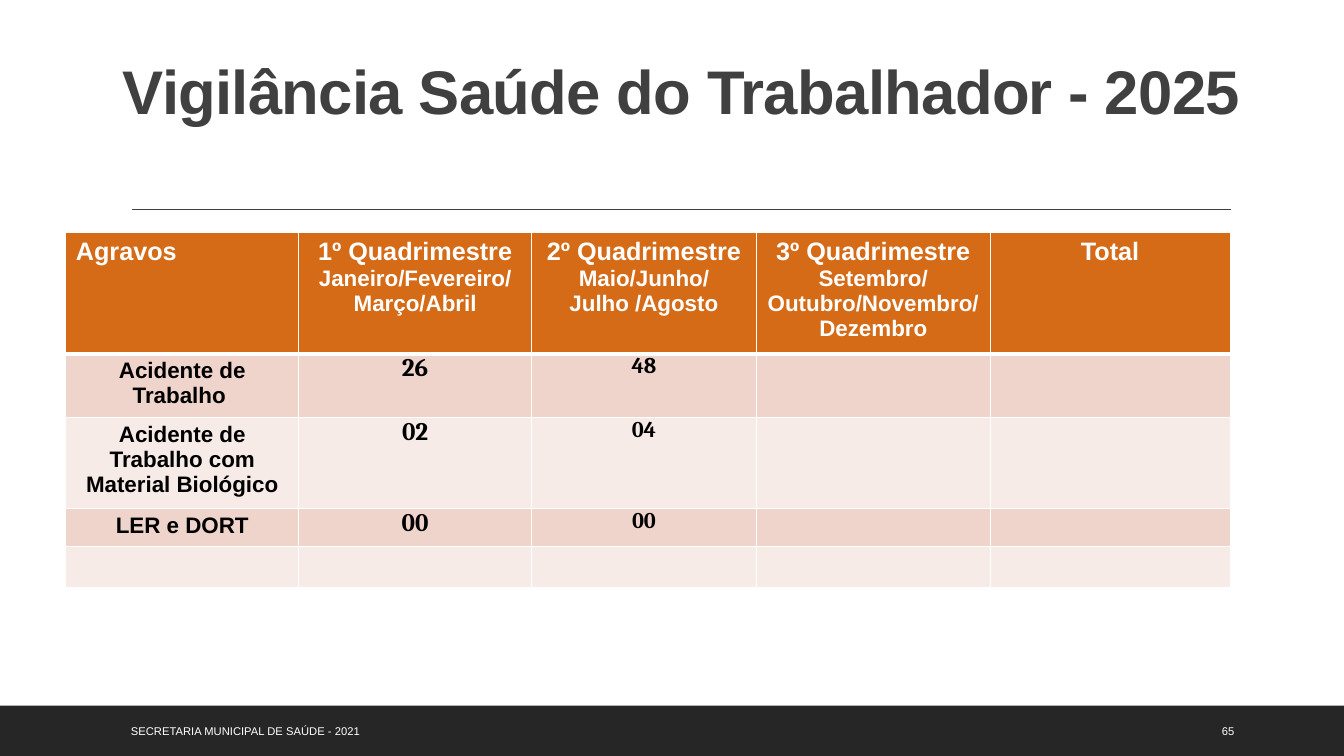
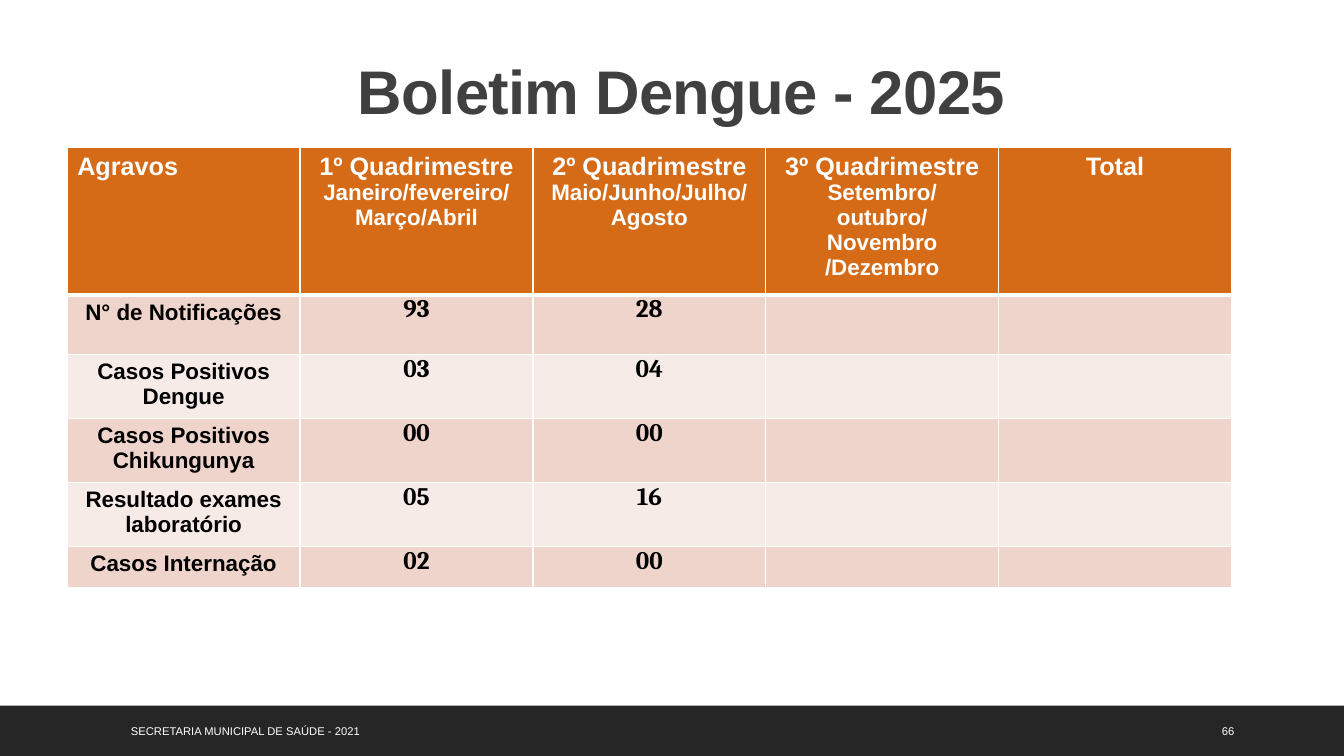
import pptx
import pptx.util
import pptx.dml.color
import pptx.enum.lang
import pptx.enum.shapes
import pptx.enum.text
import pptx.oxml
import pptx.oxml.ns

COLOURS = {"white": "FFFFFF", "band": "262626", "title": "404040", "header": "D56A17",
           "odd": "EFD4CC", "even": "F7EBE8", "text": "000000"}
BODY_FONT, FIGURE_FONT = "Arial", "Cambria"
SLIDE = (0, 0, pptx.util.Inches(13.33), pptx.util.Inches(7.5))
ALIGN = pptx.enum.text.PP_ALIGN
ANCHOR = pptx.enum.text.MSO_ANCHOR


def part(box, x, y, w, h):
    """Return the part of a box given in percent of its size."""
    left, top, width, height = box
    return (round(left + width * x / 100), round(top + height * y / 100),
            round(width * w / 100), round(height * h / 100))


def rgb(name):
    return pptx.dml.color.RGBColor.from_string(COLOURS[name])


def add_text(frame, text, size, colour="white", font=BODY_FONT, bold=True,
             align=ALIGN.CENTER, leading=None, spacing=None):
    """Add one formatted paragraph, filling the first one if it is free."""
    paragraph = frame.add_paragraph() if frame.text else frame.paragraphs[0]
    paragraph.alignment = align
    if leading:
        paragraph.line_spacing = leading
    run = paragraph.add_run()
    run.text = text
    run.font.size = pptx.util.Pt(size)
    run.font.name = font
    run.font.bold = bold
    run.font.color.rgb = rgb(colour)
    run.font.language_id = pptx.enum.lang.MSO_LANGUAGE_ID.BRAZILIAN_PORTUGUESE
    if spacing:
        run.font._element.set("spc", str(round(spacing * 100)))


def add_rule(slide, box):
    left, top, width, _ = box
    rule = slide.shapes.add_connector(pptx.enum.shapes.MSO_CONNECTOR.STRAIGHT,
                                      left, top, left + width, top)
    rule.line.color.rgb = rgb("title")
    rule.line.width = pptx.util.Pt(1)
    rule._element.spPr.append(pptx.oxml.parse_xml(
        f'<a:effectLst {pptx.oxml.ns.nsdecls("a")}/>'))


def add_footer(slide, box, number):
    band = slide.shapes.add_shape(pptx.enum.shapes.MSO_SHAPE.RECTANGLE, *box)
    band.shadow.inherit = False
    band.fill.solid()
    band.fill.fore_color.rgb = rgb("band")
    band.line.fill.background()
    for text, x, w in (("SECRETARIA MUNICIPAL DE SAÚDE - 2021", 9, 56),
                       (str(number), 90.17, 6.4)):
        frame = slide.shapes.add_textbox(*part(box, x, 10, w, 80)).text_frame
        frame.word_wrap = True
        frame.vertical_anchor = ANCHOR.MIDDLE
        add_text(frame, text, 8, bold=False, align=ALIGN.LEFT)


def set_title(slide, box, text):
    title = slide.shapes.title
    title.left, title.top, title.width, title.height = box
    frame = title.text_frame
    frame.word_wrap = True
    frame.auto_size = pptx.enum.text.MSO_AUTO_SIZE.NONE
    frame.vertical_anchor = ANCHOR.BOTTOM
    add_text(frame, text, 44, colour="title", leading=0.9, spacing=-0.5)


def style_cell(cell, fill, top=1, bottom=1):
    """Draw white borders, then the fill that has to follow them."""
    properties = cell._tc.get_or_add_tcPr()
    for side, points in (("L", 1), ("R", 1), ("T", top), ("B", bottom)):
        properties.append(pptx.oxml.parse_xml(
            f'<a:ln{side} {pptx.oxml.ns.nsdecls("a")} w="{pptx.util.Pt(points)}">'
            f'<a:solidFill><a:srgbClr val="{COLOURS["white"]}"/></a:solidFill>'
            f'</a:ln{side}>'))
    cell.fill.solid()
    cell.fill.fore_color.rgb = rgb(fill)


def add_grid(slide, box, columns, heights, periods, records, figure_sizes):
    """Columns are relative widths; heights are percent of the slide height."""
    grid = slide.shapes.add_table(len(records) + 1, len(columns), *box).table
    for column, share in zip(grid.columns, columns):
        column.width = round(box[2] * share / sum(columns))
    for row, height in zip(grid.rows, heights):
        row.height = round(SLIDE[3] * height / 100)

    # Header row
    headings = [("Agravos", None),
                *((f"{i}º Quadrimestre", months) for i, months in enumerate(periods, 1)),
                ("Total", None)]
    for c, (heading, months) in enumerate(headings):
        cell = grid.cell(0, c)
        style_cell(cell, "header", bottom=3)
        add_text(cell.text_frame, heading, 18, align=ALIGN.CENTER if c else ALIGN.LEFT)
        if months:
            add_text(cell.text_frame, months, 16)

    # Condition names and figures
    for r, (condition, *figures) in enumerate(records, 1):
        for c in range(len(columns)):
            cell = grid.cell(r, c)
            style_cell(cell, "odd" if r % 2 else "even", top=3 if r == 1 else 1)
            if c:
                cell.margin_left = cell.margin_right = 0
                cell.margin_top = cell.margin_bottom = 0
        if condition:
            add_text(grid.cell(r, 0).text_frame, condition, 16, colour="text")
        for c, (figure, size) in enumerate(zip(figures, figure_sizes), 1):
            add_text(grid.cell(r, c).text_frame, figure, size, colour="text",
                     font=FIGURE_FONT)


def add_report(deck, number, title, origin, **grid):
    slide = deck.slides.add_slide(deck.slide_layouts[5])
    add_footer(slide, part(SLIDE, 0, 93.33, 100, 6.67), number)
    add_rule(slide, part(SLIDE, 9.83, 27.73, 81.75, 0))
    set_title(slide, part(SLIDE, 5.85, 4.13, 89.7, 13.47), title)
    add_grid(slide, part(SLIDE, *origin, 86.63, sum(grid["heights"])), **grid)


REPORTS = [
    dict(title="Vigilância Saúde do Trabalhador - 2025", origin=(4.9, 30.8),
         columns=(2.31, 2.31, 2.23, 2.32, 2.38),
         heights=(14.8, 7.87, 11.2, 5.07, 5.47), figure_sizes=(18, 16),
         periods=("Janeiro/Fevereiro/ Março/Abril", "Maio/Junho/Julho /Agosto",
                  "Setembro/Outubro/Novembro/ Dezembro"),
         records=[("Acidente de Trabalho ", "26", "48"),
                  ("Acidente de Trabalho com Material Biológico", "02", "04"),
                  ("LER e DORT", "00", "00"),
                  ("",)]),
    dict(title="Boletim Dengue - 2025", origin=(5, 19.5),
         columns=(1,) * 5,
         heights=(18.13, 7.87, 7.93, 7.93, 7.93, 5.47), figure_sizes=(18, 18),
         periods=("Janeiro/fevereiro/ Março/Abril", "Maio/Junho/Julho/Agosto",
                  "Setembro/outubro/Novembro /Dezembro"),
         records=[("N° de Notificações", "93", "28"),
                  ("Casos Positivos Dengue", "03", "04"),
                  ("Casos Positivos Chikungunya", "00", "00"),
                  ("Resultado exames laboratório", "05", "16"),
                  ("Casos Internação", "02", "00")]),
]


def main():
    deck = pptx.Presentation()
    deck.slide_width, deck.slide_height = SLIDE[2:]
    for number, report in enumerate(REPORTS, 65):
        add_report(deck, number, **report)
    deck.save("out.pptx")


if __name__ == "__main__":
    main()
